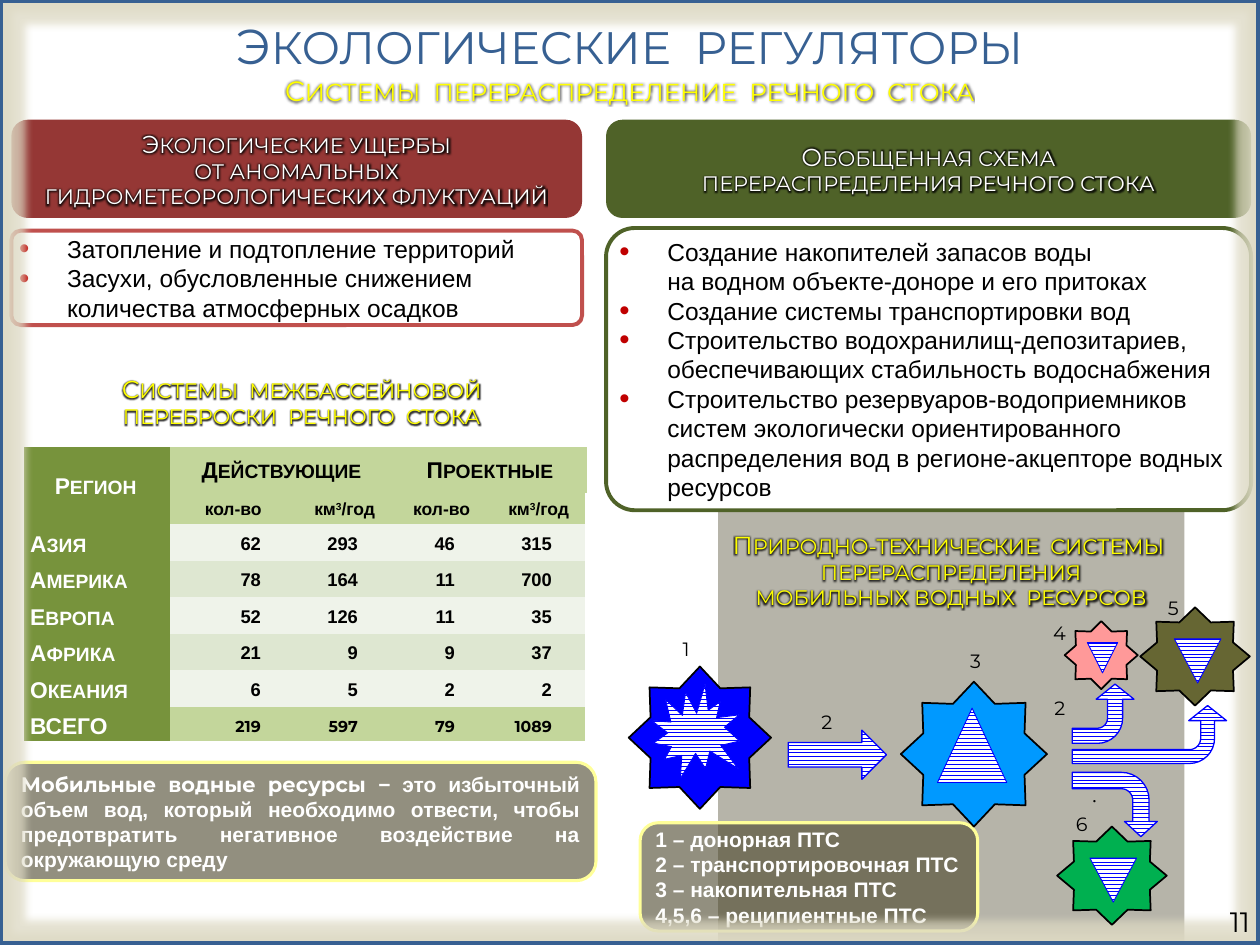
from copy import deepcopy
from math import cos, sin, pi
from lxml import etree
from pptx import Presentation
from pptx.dml.color import RGBColor
from pptx.enum import dml, shapes, text
from pptx.oxml import parse_xml
from pptx.oxml.ns import nsdecls, qn
from pptx.util import Inches, Pt

BLUE = RGBColor(0x37, 0x60, 0x92)
INK = RGBColor(0, 0, 255)
YELLOW = RGBColor(255, 255, 0)
CREAM = RGBColor(255, 255, 0x99)
WHITE = RGBColor(255, 255, 255)
BLACK = RGBColor(0, 0, 0)
RED = RGBColor(0x95, 0x37, 0x35)
ROSE = RGBColor(0xC0, 0x50, 0x4D)
GREEN = RGBColor(0x4F, 0x62, 0x28)
OLIVE = RGBColor(0x77, 0x93, 0x3C)
LIME = RGBColor(0xC3, 0xD6, 0x9B)
PALE = RGBColor(0xEF, 0xF3, 0xEA)
MIST = RGBColor(0xDE, 0xE7, 0xD1)
BROWN = RGBColor(0x4A, 0x45, 0x2A)
HEAD, BODY = "Montserrat", "Arial"
KIND, ALIGN, MID = shapes.MSO_SHAPE, text.PP_ALIGN, text.MSO_ANCHOR.MIDDLE


def box(*sides):
    return [Inches(side) for side in sides]


def glow(rad, color, alpha):
    return parse_xml(f'<a:effectLst {nsdecls("a")}><a:glow rad="{Pt(rad)}"><a:srgbClr val="{color}">'
                     f'<a:alpha val="{alpha * 1000}"/></a:srgbClr></a:glow></a:effectLst>')


def add_run(par, words, size, font, color, bold=False, halo=False):
    """Add one run; a line end in the words becomes a line break."""
    for i, line in enumerate(words.split("\n")):
        if i:
            par.add_line_break()
            par._p.findall(qn("a:br"))[-1].append(deepcopy(run._r.rPr))
        run = par.add_run()
        run.text = line
        run.font.size, run.font.name, run.font.bold = Pt(size), font, bold
        run.font.color.rgb = color
        if halo:
            run._r.rPr.find(qn("a:solidFill")).addnext(glow(4, BLACK, 80))


def caps(par, words, big, small, font, color, **more):
    """Write the first letter larger than the rest."""
    add_run(par, words[0], big, font, color, **more)
    add_run(par, words[1:], small, font, color, **more)


def set_frame(item, inset=(0.1, 0.05, 0.1, 0.05), anchor=MID):
    frame = item.text_frame
    frame.word_wrap, frame.auto_size = True, text.MSO_AUTO_SIZE.NONE
    frame.vertical_anchor = anchor
    (frame.margin_left, frame.margin_top,
     frame.margin_right, frame.margin_bottom) = box(*inset)
    return frame


def add_par(frame, i, align=ALIGN.LEFT):
    par = frame.add_paragraph() if i else frame.paragraphs[0]
    par.alignment = align
    return par


def add_label(slide, at, words, size, align=ALIGN.LEFT, font=HEAD, anchor=text.MSO_ANCHOR.TOP):
    frame = set_frame(slide.shapes.add_textbox(*box(*at)), anchor=anchor)
    add_run(add_par(frame, 0, align), words, size, font, BLACK)


def add_head(slide, at, lines, big, small, anchor=text.MSO_ANCHOR.TOP):
    frame = set_frame(slide.shapes.add_textbox(*box(*at)), anchor=anchor)
    caps(add_par(frame, 0, ALIGN.CENTER), lines, big, small, HEAD, YELLOW, halo=True)


def paint(form, fill, line, width):
    form.shadow.inherit = False
    if fill == "hatch":
        form.fill.patterned()
        form.fill.pattern = dml.MSO_PATTERN.ZIG_ZAG
        form.fill.fore_color.rgb, form.fill.back_color.rgb = INK, WHITE
    elif fill is None:
        form.fill.background()
    else:
        form.fill.solid()
        form.fill.fore_color.rgb = fill
    if line is None:
        form.line.fill.background()
    else:
        form.line.color.rgb, form.line.width = line, Pt(width)


def add_form(slide, kind, at, fill=None, line=None, width=1, turn=0, alpha=None):
    form = slide.shapes.add_shape(kind, *box(*at))
    form.rotation = turn
    paint(form, fill, line, width)
    if alpha:
        color = form._element.spPr.find(qn("a:solidFill"))[0]
        etree.SubElement(color, qn("a:alpha")).set("val", str(alpha * 1000))
    return form


def add_banner(slide, at, words, fill):
    frame = set_frame(add_form(slide, KIND.ROUNDED_RECTANGLE, at, fill))
    caps(add_par(frame, 0, ALIGN.CENTER), words, 14, 12, HEAD, WHITE, halo=True)


def add_note(slide, at, pars):
    form = add_form(slide, KIND.ROUNDED_RECTANGLE, at, BROWN, CREAM, 1.75, alpha=60)
    frame = set_frame(form, (0.08, 0.05, 0.08, 0.05))
    for i, runs in enumerate(pars):
        par = add_par(frame, i, ALIGN.JUSTIFY)
        for words, font in runs:
            add_run(par, words, 12, font, WHITE, True)


def fill_list(item, at, lines, color):
    """Turn a body placeholder into a rounded bullet box."""
    item.left, item.top, item.width, item.height = box(*at)
    item._element.spPr.find(qn("a:xfrm")).addnext(parse_xml(
        f'<a:prstGeom {nsdecls("a")} prst="roundRect"><a:avLst>'
        '<a:gd name="adj" fmla="val 10200"/></a:avLst></a:prstGeom>'))
    item.fill.solid()
    item.fill.fore_color.rgb = WHITE
    item.line.color.rgb, item.line.width = color, Pt(2.25)
    frame = set_frame(item, (0.04, 0, 0, 0))
    for i, line in enumerate(lines):
        par = add_par(frame, i)
        par.space_before = Pt(0)
        props = par._p.get_or_add_pPr()
        props.set("marL", str(Inches(0.38)))
        props.set("indent", str(-Inches(0.38)))
        tint = etree.SubElement(props, qn("a:buClr"))
        etree.SubElement(tint, qn("a:srgbClr")).set("val", "C00000")
        for tag, key, val in (("buSzPct", "val", "120000"), ("buFont", "typeface", BODY),
                              ("buChar", "char", "•")):
            etree.SubElement(props, qn("a:" + tag)).set(key, val)
        add_run(par, line, 14, BODY, BLACK)


def set_cell(cell, fill, align, inset=(0.07, 0.07)):
    cell.fill.solid()
    cell.fill.fore_color.rgb = fill
    cell.vertical_anchor = MID
    cell.margin_left, cell.margin_right = box(*inset)
    cell.margin_top = cell.margin_bottom = 0
    par = cell.text_frame.paragraphs[0]
    par.alignment, par.line_spacing = align, 1.15
    return par


def add_rim(grid):
    """Give the table a white outer border."""
    for r in range(8):
        for c in range(5):
            sides = [s for s, on in zip("LRTB", (c == 0, c == 4, r == 0, r == 7)) if on]
            for i, side in enumerate(sides):
                grid.cell(r, c)._tc.get_or_add_tcPr().insert(i, parse_xml(
                    f'<a:ln{side} {nsdecls("a")} w="{Pt(3)}"><a:solidFill>'
                    f'<a:srgbClr val="{WHITE}"/></a:solidFill></a:ln{side}>'))


def add_grid(slide):
    rows = [("АЗИЯ", 62, 293, 46, 315), ("АМЕРИКА", 78, 164, 11, 700),
            ("ЕВРОПА", 52, 126, 11, 35), ("АФРИКА", 21, 9, 9, 37),
            ("ОКЕАНИЯ", 6, 5, 2, 2), ("ВСЕГО", 219, 597, 79, 1089)]
    grid = slide.shapes.add_table(8, 5, *box(0.17, 3.53, 4.49, 2.35)).table
    grid.first_row = grid.horz_banding = False
    grid._tbl.tblPr.find(qn("a:tableStyleId")).text = "{2D5ABB26-0587-4C30-8999-92F81FD0307C}"
    for col, width in zip(grid.columns, (1.18, 1, 0.77, 0.77, 0.77)):
        col.width = Inches(width)
    for row, height in zip(grid.rows, [0.38, 0.25] + [0.29] * 6):
        row.height = Inches(height)
    # Two header rows
    grid.cell(0, 0).merge(grid.cell(1, 0))
    caps(set_cell(grid.cell(0, 0), OLIVE, ALIGN.CENTER), "РЕГИОН", 13, 11, BODY, WHITE, bold=True)
    for c, name in ((1, "ДЕЙСТВУЮЩИЕ"), (3, "ПРОЕКТНЫЕ")):
        grid.cell(0, c).merge(grid.cell(0, c + 1))
        caps(set_cell(grid.cell(0, c), LIME, ALIGN.CENTER), name, 13, 11, BODY, BLACK, bold=True)
        add_run(set_cell(grid.cell(1, c), LIME, ALIGN.CENTER), "кол-во", 10, BODY, BLACK, True)
        par = set_cell(grid.cell(1, c + 1), LIME, ALIGN.CENTER)
        for part in ("км", "3", "/год"):
            add_run(par, part, 10, BODY, BLACK, True)
        par.runs[1]._r.rPr.set("baseline", "30000")
    # Regions and the total
    for r, (name, *nums) in enumerate(rows, 2):
        last = r == 7
        par = set_cell(grid.cell(r, 0), OLIVE, ALIGN.LEFT)
        caps(par, name, 13, 13 if last else 11, BODY, WHITE, bold=True)
        fill = LIME if last else (PALE, MIST)[r % 2]
        for c, num in enumerate(nums, 1):
            par = set_cell(grid.cell(r, c), fill, ALIGN.RIGHT, (0.04, 0.28))
            add_run(par, str(num), 9 if last else 10.5, HEAD if last else BODY, BLACK, True)
    add_rim(grid)


def add_bend(slide, y, thick, right, rad, tip, half):
    """Draw a bent arrow that starts level at y and ends at the tip."""
    way = 1 if tip > y else -1
    neck, mid = tip - way * 0.12, right - thick / 2
    turns = [i * pi / 16 for i in range(9)]

    def arc(r, x, top):
        return [(x - r + r * sin(t), top + way * (r - r * cos(t))) for t in turns]
    inner = arc(rad - thick, right - thick, y + way * thick)
    pts = [(8.51, y), *arc(rad, right, y), (right, neck), (mid + half, neck), (mid, tip),
           (mid - half, neck), (right - thick, neck), *inner[::-1], (8.51, y + way * thick)]
    pen = slide.shapes.build_freeform(*box(*pts[0]))
    pen.add_line_segments([box(*p) for p in pts[1:]], close=True)
    paint(pen.convert_to_shape(), "hatch", INK, 0.75)


def add_scheme(slide):
    for bend in ((6.06, 0.11, 9.64, 0.2, 5.6, 0.15), (6.13, 0.13, 9.12, 0.22, 6.64, 0.13),
                 (5.9, 0.12, 8.91, 0.2, 5.43, 0.15)):
        add_bend(slide, *bend)
    add_label(slide, (8.57, 6.17, 0.29, 0.35), ".", 11, font="Times New Roman")
    add_form(slide, KIND.UP_ARROW, (6.45, 5.6, 0.39, 0.78), "hatch", INK, 0.75, 90)
    # Stars with the mark inside each
    tri = KIND.ISOSCELES_TRIANGLE
    for star, color, kind, mark, turn in (
            ((8.39, 6.56, 0.87, 0.78), "00B050", tri, (8.65, 6.81, 0.37, 0.35), 180),
            ((8.45, 4.93, 0.58, 0.54), "FF9999", tri, (8.63, 5.1, 0.24, 0.24), 180),
            ((9.05, 4.82, 0.87, 0.78), "666633", tri, (9.32, 5.07, 0.37, 0.35), 180),
            ((4.99, 5.29, 1.13, 1.13), "0000FF", KIND.EXPLOSION1, (5.17, 5.43, 0.7, 0.75), 180),
            ((7.15, 5.41, 1.16, 1.15), "0099FF", tri, (7.44, 5.62, 0.55, 0.59), 0)):
        add_form(slide, KIND.STAR_8_POINT, star, RGBColor.from_string(color), BLACK)
        add_form(slide, kind, mark, "hatch", INK, 0.5, turn)
    for num, x, y in (("2", 6.42, 5.59), ("2", 8.27, 5.48), ("3", 7.6, 5.1), ("4", 8.26, 4.88),
                      ("5", 9.17, 4.68), ("6", 8.44, 6.4), ("1", 5.32, 5.01)):
        add_label(slide, (x, y, 0.31, 0.29), num, 11)


def main():
    deck = Presentation()
    deck.slide_width, deck.slide_height = box(10, 7.5)
    slide = deck.slides.add_slide(deck.slide_layouts[3])
    title, left, right = slide.placeholders
    # Shaded band behind everything
    band = add_form(slide, KIND.RECTANGLE, (5.7, 2.87, 3.7, 4.63), BROWN, alpha=40)
    slide.shapes._spTree.insert(2, band._element)
    # Titles
    title.left, title.top, title.width, title.height = box(0, 0.12, 10, 0.47)
    par = add_par(set_frame(title, (0, 0.05, 0, 0.05)), 0, ALIGN.CENTER)
    caps(par, "ЭКОЛОГИЧЕСКИЕ  РЕГУЛЯТОРЫ", 28, 26, HEAD, BLUE)
    add_head(slide, (0, 0.56, 10, 0.31), "СИСТЕМЫ  ПЕРЕРАСПРЕДЕЛЕНИЕ  РЕЧНОГО  СТОКА", 16, 14, MID)
    add_head(slide, (5.7, 4.16, 3.7, 0.74), "ПРИРОДНО-ТЕХНИЧЕСКИЕ  СИСТЕМЫ  ПЕРЕРАСПРЕДЕЛЕНИЯ\n"
             "МОБИЛЬНЫХ ВОДНЫХ  РЕСУРСОВ", 14, 12)
    add_head(slide, (0.15, 2.92, 4.49, 0.54),
             "СИСТЕМЫ  МЕЖБАССЕЙНОВОЙ\nПЕРЕБРОСКИ  РЕЧНОГО  СТОКА", 14, 12)
    add_grid(slide)
    # Banners and lists
    add_banner(slide, (0.09, 0.95, 4.53, 0.78), "ЭКОЛОГИЧЕСКИЕ УЩЕРБЫ\n"
               "ОТ АНОМАЛЬНЫХ ГИДРОМЕТЕОРОЛОГИЧЕСКИХ ФЛУКТУАЦИЙ", RED)
    add_banner(slide, (4.81, 0.95, 5.12, 0.78),
               "ОБОБЩЕННАЯ СХЕМА\nПЕРЕРАСПРЕДЕЛЕНИЯ РЕЧНОГО СТОКА", GREEN)
    fill_list(left, (0.09, 1.83, 4.53, 0.75), [
        "Затопление и подтопление территорий",
        "Засухи, обусловленные снижением количества атмосферных осадков"], ROSE)
    fill_list(right, (4.81, 1.81, 5.12, 2.24), [
        "Создание накопителей запасов воды\nна водном объекте-доноре и его притоках",
        "Создание системы транспортировки вод",
        "Строительство водохранилищ-депозитариев, обеспечивающих стабильность водоснабжения",
        "Строительство резервуаров-водоприемников систем экологически ориентированного "
        "распределения вод в регионе-акцепторе водных ресурсов"], GREEN)
    # Notes
    add_note(slide, (0.04, 6.05, 4.69, 0.94), [[
        ("Мобильные водные ресурсы ", HEAD),
        ("− это избыточный объем вод, который необходимо отвести, чтобы предотвратить "
         "негативное воздействие на окружающую среду", BODY)]])
    add_note(slide, (5.08, 6.53, 2.68, 0.86), [[(line, BODY)] for line in (
        "1 – донорная ПТС", "2 – транспортировочная ПТС",
        "3 – накопительная ПТС", "4,5,6 – реципиентные ПТС")])
    # Glowing frame and page number
    edge = add_form(slide, KIND.RECTANGLE, (0, 0, 10, 7.5), None, BLUE, 4)
    props = edge._element.spPr
    props.replace(props.find(qn("a:effectLst")), glow(8, "DDD9C3", 75))
    add_label(slide, (7.69, 7.11, 2.33, 0.4), "11", 16, ALIGN.RIGHT, anchor=MID)
    add_scheme(slide)
    deck.save("out.pptx")


if __name__ == "__main__":
    main()
